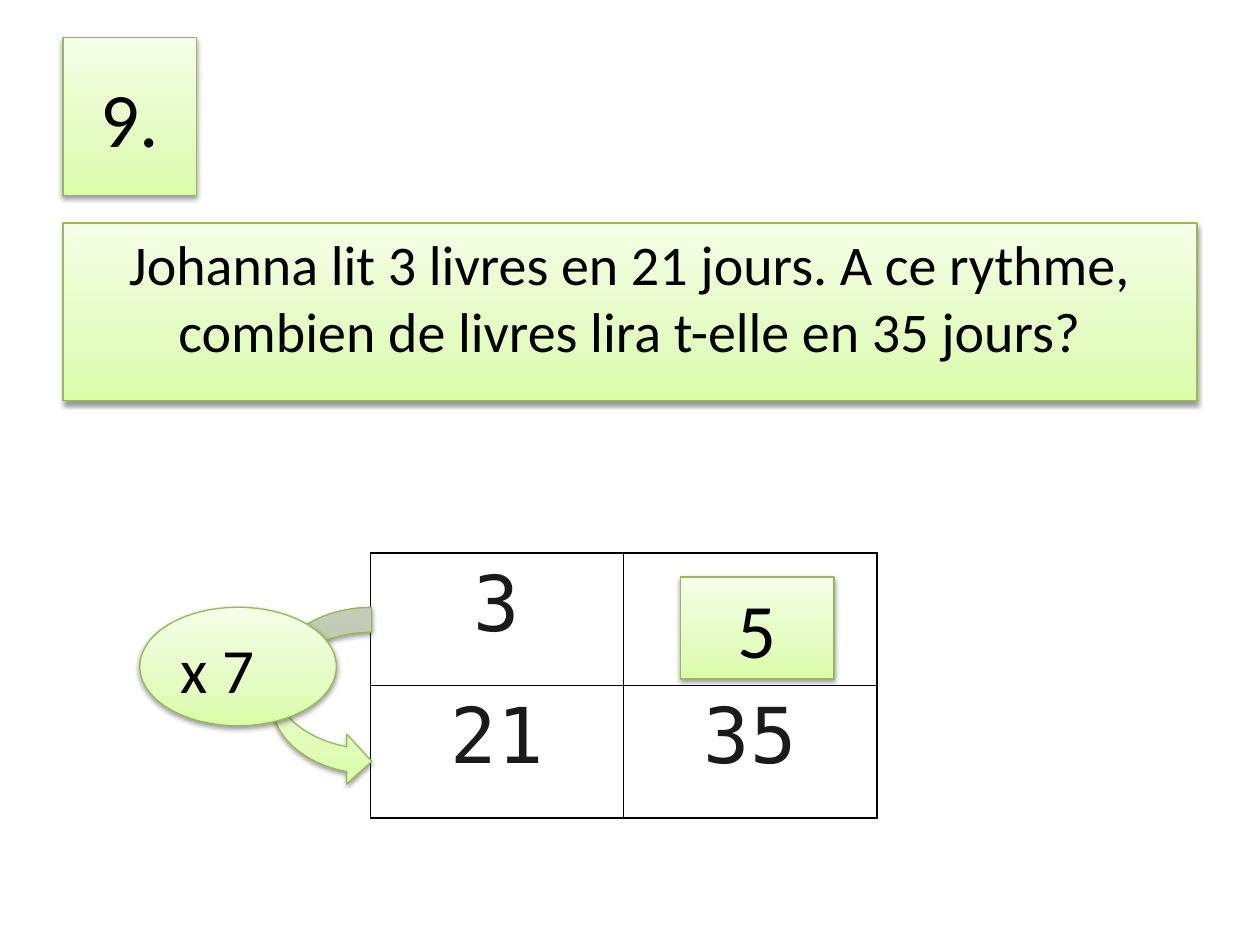
from dataclasses import dataclass

from pptx import Presentation
from pptx.dml.color import RGBColor
from pptx.enum.shapes import MSO_SHAPE
from pptx.enum.text import MSO_ANCHOR, PP_ALIGN
from pptx.oxml import parse_xml
from pptx.oxml.ns import nsdecls, qn
from pptx.util import Inches, Pt


@dataclass(frozen=True)
class Theme:
    gradient: tuple = ((0, "DAFDA7"), (35, "E4FCC2"), (100, "F5FFE7"))
    outline: str = "98B955"
    text: str = "000000"
    table_text: str = "1A1A1A"
    table_fill: str = "FFFFFF"
    table_border: str = "000000"
    font: str = "Calibri"
    table_font: str = "DejaVu Sans Mono"
    large: int = 44
    medium: int = 36
    body: int = 32


THEME = Theme()


def write_text(frame, text, size=THEME.large, font=THEME.font, color=THEME.text,
               align=PP_ALIGN.CENTER, anchor=MSO_ANCHOR.MIDDLE, space_before=0):
    frame.word_wrap = True
    frame.vertical_anchor = anchor
    paragraph = frame.paragraphs[0]
    paragraph.alignment = align
    paragraph.space_before = Pt(space_before)
    run = paragraph.add_run()
    run.text = text
    run.font.size = Pt(size)
    run.font.name = font
    run.font.color.rgb = RGBColor.from_string(color)


class SlideBuilder:
    """Draws styled elements on the current slide."""

    def __init__(self, slide, theme):
        self.slide = slide
        self.theme = theme

    def group(self):
        return self.slide.shapes.add_group_shape()

    def shape(self, kind, left, top, width, height, group=None):
        parent = group or self.slide
        shape = parent.shapes.add_shape(
            kind, Inches(left), Inches(top), Inches(width), Inches(height))
        shape.line.color.rgb = RGBColor.from_string(self.theme.outline)
        shape.line.width = Pt(0.75)
        self.apply_gradient(shape)
        self.apply_shadow(shape)
        return shape

    def apply_gradient(self, shape):
        stops = "".join(
            f'<a:gs pos="{position * 1000}"><a:srgbClr val="{color}"/></a:gs>'
            for position, color in self.theme.gradient)
        shape.fill.background()
        properties = shape._element.spPr
        properties.replace(properties.find(qn("a:noFill")), parse_xml(
            f'<a:gradFill {nsdecls("a")} rotWithShape="1"><a:gsLst>{stops}</a:gsLst>'
            '<a:lin ang="16200000" scaled="0"/></a:gradFill>'))

    def apply_shadow(self, shape):
        shape.shadow.inherit = False
        shape._element.spPr.find(qn("a:effectLst")).append(parse_xml(
            f'<a:outerShdw {nsdecls("a")} blurRad="{Pt(3.1)}" dist="{Pt(1.6)}" '
            'dir="5400000" rotWithShape="0"><a:srgbClr val="000000">'
            '<a:alpha val="38000"/></a:srgbClr></a:outerShdw>'))

    def table(self, rows, left, top, width, height):
        table = self.slide.shapes.add_table(
            len(rows), len(rows[0]), Inches(left), Inches(top),
            Inches(width), Inches(height)).table
        for row_index, row in enumerate(rows):
            for column_index, text in enumerate(row):
                self.cell(table.cell(row_index, column_index), text)

    def cell(self, cell, text):
        for edge in ("lnL", "lnR", "lnT", "lnB"):
            cell._tc.get_or_add_tcPr().append(parse_xml(
                f'<a:{edge} {nsdecls("a")} w="{Pt(1)}"><a:solidFill>'
                f'<a:srgbClr val="{self.theme.table_border}"/></a:solidFill></a:{edge}>'))
        cell.fill.solid()
        cell.fill.fore_color.rgb = RGBColor.from_string(self.theme.table_fill)
        if text:
            write_text(cell.text_frame, text, font=self.theme.table_font,
                       color=self.theme.table_text, anchor=MSO_ANCHOR.TOP)


def main():
    presentation = Presentation()
    presentation.slide_width = Inches(10)
    presentation.slide_height = Inches(7.5)
    slide = presentation.slides.add_slide(presentation.slide_layouts[6])
    builder = SlideBuilder(slide, THEME)

    number = builder.shape(MSO_SHAPE.RECTANGLE, 0.5, 0.3, 1.06, 1.25)
    write_text(number.text_frame, "9.")

    question = builder.shape(MSO_SHAPE.RECTANGLE, 0.5, 1.77, 9, 1.41)
    write_text(question.text_frame,
               "Johanna lit 3 livres en 21 jours. A ce rythme, "
               "combien de livres lira t-elle en 35 jours?",
               size=THEME.body, anchor=MSO_ANCHOR.TOP, space_before=6.4)

    builder.table((("3", ""), ("21", "35")), 2.94, 4.39, 4.02, 2.1)

    answer = builder.shape(MSO_SHAPE.RECTANGLE, 5.4, 4.58, 1.22, 0.81)
    write_text(answer.text_frame, "5")

    multiplier = builder.group()
    builder.shape(MSO_SHAPE.CURVED_RIGHT_ARROW, 2.16, 4.82, 0.79, 1.42, multiplier)
    factor = builder.shape(MSO_SHAPE.OVAL, 1.11, 4.82, 1.56, 0.94, multiplier)
    write_text(factor.text_frame, "x 7", size=THEME.medium,
               align=PP_ALIGN.LEFT, anchor=MSO_ANCHOR.TOP)

    presentation.save("out.pptx")


if __name__ == "__main__":
    main()
